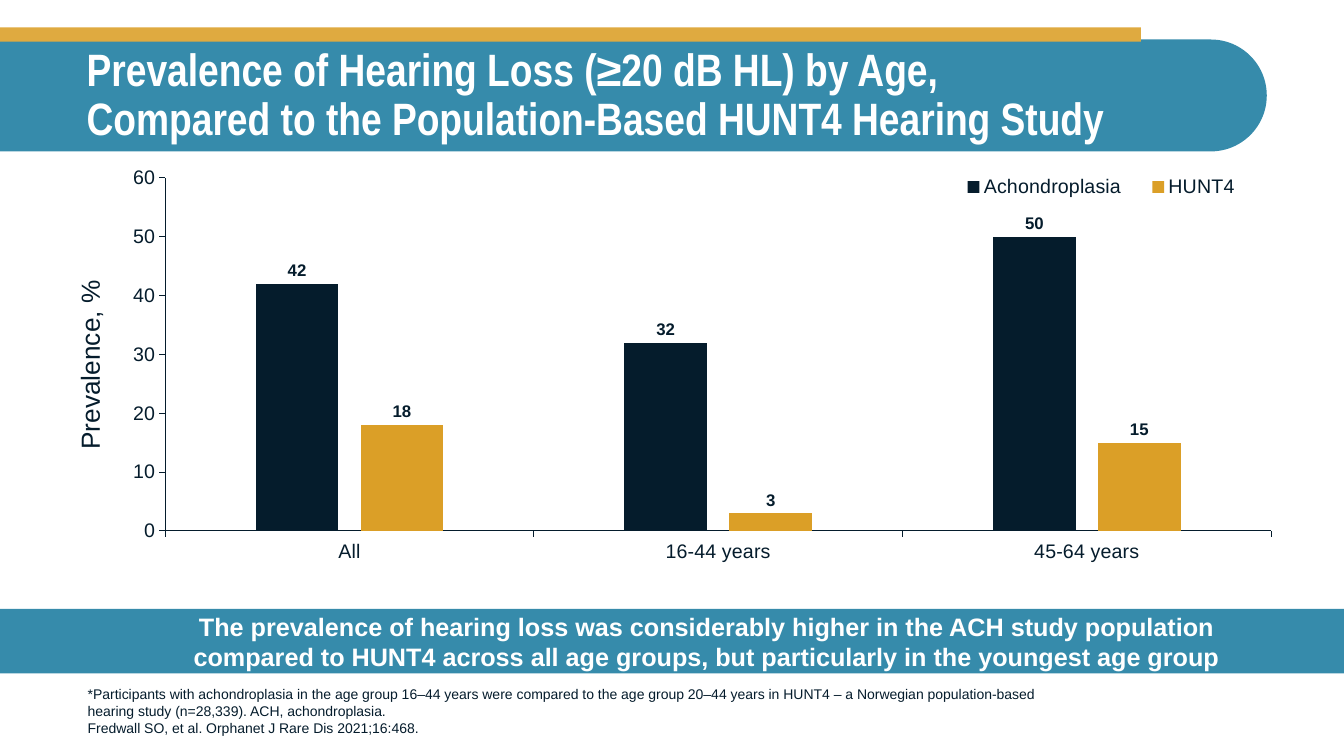
from dataclasses import dataclass

from lxml import etree
from pptx import Presentation
from pptx.chart import data as chart_data
from pptx.dml.color import RGBColor
from pptx.enum import chart as ch, shapes, text
from pptx.oxml import ns
from pptx.util import Cm, Pt


@dataclass(frozen=True)
class Theme:
    teal = RGBColor.from_string("368BAB")
    stripe = RGBColor.from_string("DFAA40")
    navy = RGBColor.from_string("051C2C")
    gold = RGBColor.from_string("DB9F27")
    white = RGBColor.from_string("FFFFFF")
    body_font = "Arial"
    title_font = "Arial Narrow"
    title_size = 32.4
    axis_title_size = 18.7
    message_size = 18
    axis_size = 14
    label_size = 12
    note_size = 10


THEME = Theme()
TITLE = ("Prevalence of Hearing Loss (≥20 dB HL) by Age,\v"
         "Compared to the Population-Based HUNT4 Hearing Study")
MESSAGE = ("The prevalence of hearing loss was considerably higher in the ACH study population "
           "compared to HUNT4 across all age groups, but particularly in the youngest age group")
NOTES = ("*Participants with achondroplasia in the age group 16–44 years were compared to the "
         "age group 20–44 years in HUNT4 – a Norwegian population-based hearing study "
         "(n=28,339). ACH, achondroplasia.\n"
         "Fredwall SO, et al. Orphanet J Rare Dis 2021;16:468.")
AGE_GROUPS = ("All", "16-44 years", "45-64 years")
STUDIES = (("Achondroplasia", (42, 32, 50), THEME.navy),
           ("HUNT4", (18, 3, 15), THEME.gold))


def style_font(font, size, color, bold=False, name=THEME.body_font):
    font.name, font.size, font.bold = name, Pt(size), bold
    font.color.rgb = color


def place(shape, left, top, width, height):
    """Position a shape, with lengths in centimetres."""
    shape.left, shape.top = Cm(left), Cm(top)
    shape.width, shape.height = Cm(width), Cm(height)


def fill_text(box, content, size, color, anchor, align, bold=False, name=THEME.body_font):
    frame = box.text_frame
    frame.text = content
    frame.word_wrap = True
    frame.auto_size = text.MSO_AUTO_SIZE.NONE
    frame.vertical_anchor = anchor
    for para in frame.paragraphs:
        para.alignment = align
        para.space_before = Pt(0)
        for span in para.runs:
            style_font(span.font, size, color, bold, name)


def add_block(slide, kind, color, *box):
    block = slide.shapes.add_shape(kind, *map(Cm, box))
    block.shadow.inherit = False
    block.fill.solid()
    block.fill.fore_color.rgb = color
    block.line.fill.background()
    return block


def add_label(slide, box, content, size, anchor, align):
    label = slide.shapes.add_textbox(*map(Cm, box))
    fill_text(label, content, size, THEME.navy, anchor, align)
    return label


def add_header(slide):
    banner = add_block(slide, shapes.MSO_SHAPE.ROUND_2_SAME_RECTANGLE, THEME.teal,
                       14.55, -13.56, 2.82, 31.93)
    banner.adjustments[0], banner.adjustments[1] = 0, 0.5
    banner.rotation = 270
    add_block(slide, shapes.MSO_SHAPE.RECTANGLE, THEME.stripe, 0, 0.69, 28.75, 0.36)
    title = slide.shapes.title
    place(title, 1.93, 1.02, 30, 2.79)
    fill_text(title, TITLE, THEME.title_size, THEME.white, text.MSO_ANCHOR.MIDDLE,
              text.PP_ALIGN.LEFT, True, THEME.title_font)
    title.text_frame.paragraphs[0].line_spacing = 0.9
    slide.shapes.element.append(title.element)  # bring in front of the banner


def add_message_band(slide):
    band = slide.placeholders[1]
    place(band, 0, 15.34, 33.87, 1.63)
    band.fill.solid()
    band.fill.fore_color.rgb = THEME.teal
    frame = band.text_frame
    frame.margin_left = frame.margin_right = Cm(2)
    fill_text(band, MESSAGE, THEME.message_size, THEME.white, text.MSO_ANCHOR.MIDDLE,
              text.PP_ALIGN.CENTER, True)
    props = frame.paragraphs[0]._p.get_or_add_pPr()
    props.set("marL", str(Cm(1.75)))
    props.set("indent", "0")
    etree.SubElement(props, ns.qn("a:buNone"))


def set_layout(parent, before, x, y, w, h, inner=False):
    """Place a chart part by fractions of the chart, ahead of the first child named in before."""
    for old in parent.findall(ns.qn("c:layout")):
        parent.remove(old)
    layout = etree.Element(ns.qn("c:layout"))
    manual = etree.SubElement(layout, ns.qn("c:manualLayout"))
    values = [("xMode", "edge"), ("yMode", "edge"), ("x", x), ("y", y), ("w", w), ("h", h)]
    if inner:
        values.insert(0, ("layoutTarget", "inner"))
    for tag, value in values:
        etree.SubElement(manual, ns.qn("c:" + tag)).set("val", str(value))
    next(child for child in parent if child.tag in map(ns.qn, before)).addprevious(layout)


def style_axis(axis):
    axis.has_major_gridlines = False
    axis.major_tick_mark = ch.XL_TICK_MARK.OUTSIDE
    axis.minor_tick_mark = ch.XL_TICK_MARK.NONE
    axis.format.line.color.rgb = THEME.navy
    axis.format.line.width = Pt(0.75)
    style_font(axis.tick_labels.font, THEME.axis_size, THEME.navy)


def style_series(series, color):
    series.format.fill.solid()
    series.format.fill.fore_color.rgb = color
    labels = series.data_labels
    labels.show_value = True
    labels.position = ch.XL_LABEL_POSITION.OUTSIDE_END
    style_font(labels.font, THEME.label_size, THEME.navy, True)


def add_prevalence_chart(slide):
    data = chart_data.CategoryChartData()
    data.categories = AGE_GROUPS
    for name, values, _ in STUDIES:
        data.add_series(name, values)
    chart = slide.shapes.add_chart(ch.XL_CHART_TYPE.COLUMN_CLUSTERED, Cm(2.51), Cm(4.17),
                                   Cm(29.54), Cm(10.85), data).chart
    style_font(chart.font, THEME.note_size, THEME.navy)
    chart.has_title = False
    plot = chart.plots[0]
    plot.gap_width, plot.overlap, plot.vary_by_categories = 219, -27, False
    for series, (_, _, color) in zip(plot.series, STUDIES):
        style_series(series, color)

    for axis in (chart.category_axis, chart.value_axis):
        style_axis(axis)
    chart.value_axis.minimum_scale = 0
    chart.value_axis.maximum_scale = 60
    chart.value_axis.major_unit = 10

    chart.has_legend = True
    legend = chart.legend
    legend.position = ch.XL_LEGEND_POSITION.BOTTOM
    legend.include_in_layout = False
    style_font(legend.font, THEME.axis_size, THEME.navy)
    set_layout(legend._element, ["c:overlay"], 0.72, 0.01, 0.27, 0.08)
    set_layout(chart._chartSpace.chart.plotArea, ["c:barChart"],
               0.056, 0.029, 0.944, 0.82, inner=True)


def main():
    deck = Presentation()
    deck.slide_width, deck.slide_height = Cm(33.87), Cm(19.05)
    slide = deck.slides.add_slide(deck.slide_layouts[1])
    add_header(slide)
    add_message_band(slide)
    add_prevalence_chart(slide)
    add_label(slide, (1.96, 17.04, 25.1, 1.63), NOTES, THEME.note_size,
              text.MSO_ANCHOR.BOTTOM, text.PP_ALIGN.LEFT)
    axis_title = add_label(slide, (-2.84, 8.66, 10.21, 1.07), "Prevalence, %",
                           THEME.axis_title_size, text.MSO_ANCHOR.TOP, text.PP_ALIGN.CENTER)
    axis_title.rotation = 270
    deck.save("out.pptx")


if __name__ == "__main__":
    main()
